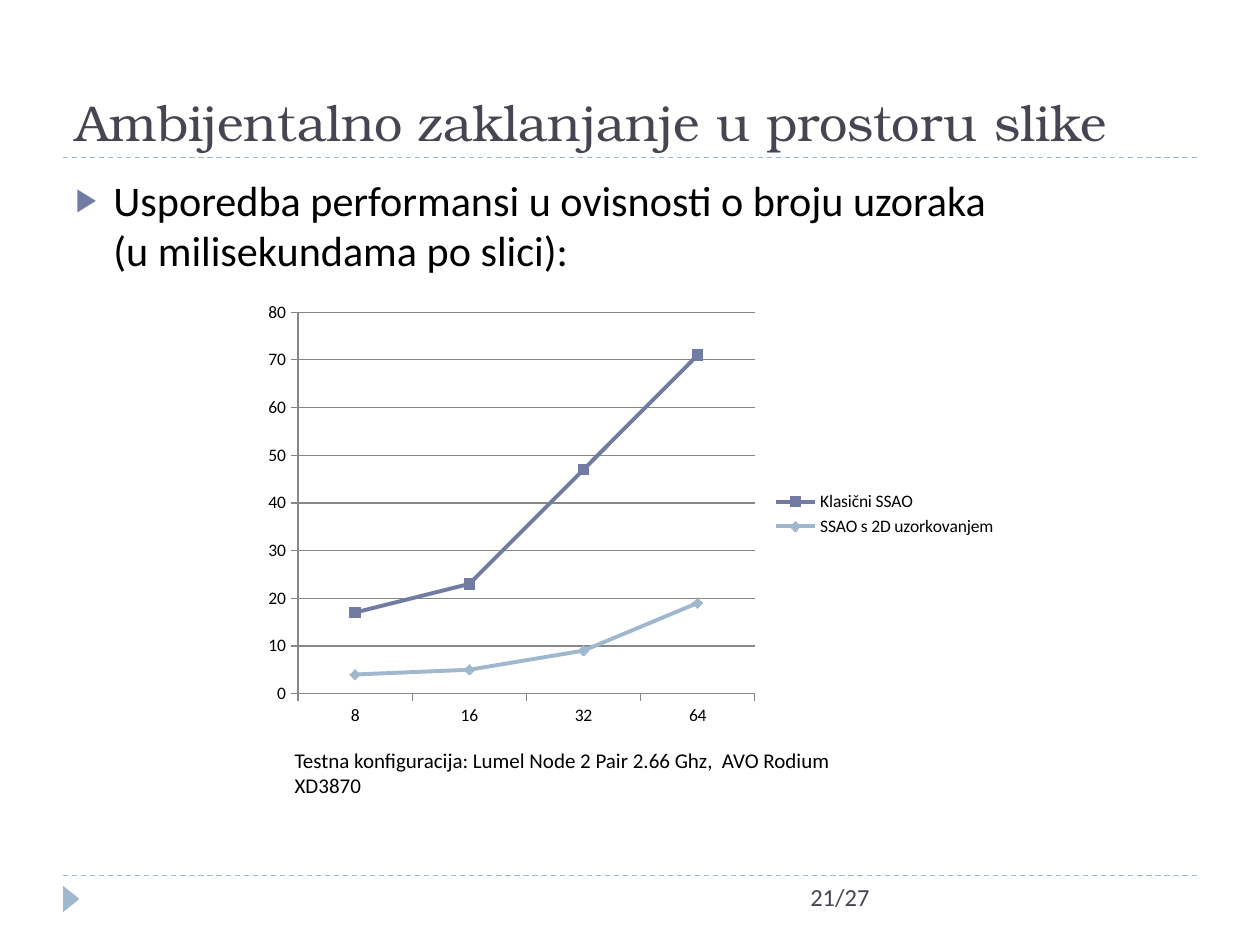
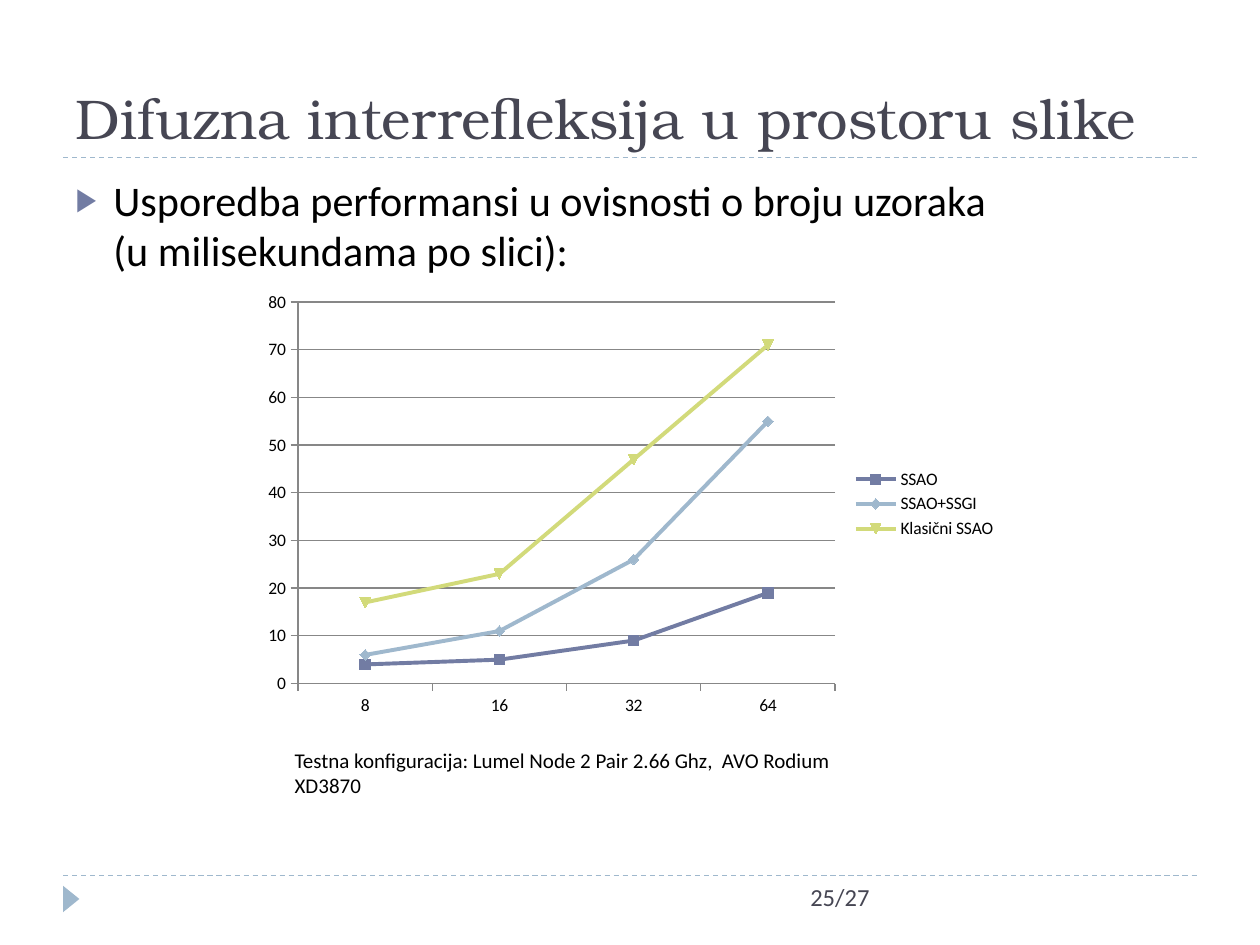
from dataclasses import dataclass

import lxml.etree
import copy
import pptx
import pptx.chart.data
import pptx.dml.color
import pptx.enum.chart
import pptx.enum.dml
import pptx.enum.shapes
import pptx.enum.text
import pptx.oxml.ns
import pptx.util


@dataclass(frozen=True)
class Theme:
    heading_font: str = "TeX Gyre Bonum"
    text_font: str = "Calibri"
    ink: str = "000000"
    slate: str = "464653"
    rule: str = "9FB8CD"
    grid: str = "878787"
    bullet: str = "727CA3"
    series: tuple = ("727CA3", "9FB8CD", "D2DA7A")
    title_size: float = 32
    body_size: float = 24.1
    page_size: float = 14
    caption_size: float = 12
    chart_size: float = 10


THEME = Theme()
COLUMNS, ROWS = 20, 15
SLIDE_TOTAL = 27
INTRO = "Usporedba performansi u ovisnosti o broju uzoraka\v(u milisekundama po slici):"
TEST_SETUP = "Testna konfiguracija: Lumel Node 2 Pair 2.66 Ghz,  AVO Rodium XD3870"
SAMPLE_COUNTS = ("8", "16", "32", "64")
CLASSIC_TIMES = (17, 23, 47, 71)
SAMPLED_TIMES = (4, 5, 9, 19)
COMBINED_TIMES = (6, 11, 26, 55)


def rgb(color):
    return pptx.dml.color.RGBColor.from_string(color)


def write(frame, text, size, color=THEME.ink, font=THEME.text_font,
          align=pptx.enum.text.PP_ALIGN.LEFT,
          anchor=pptx.enum.text.MSO_ANCHOR.TOP, before=0):
    frame.word_wrap = True
    frame.auto_size = pptx.enum.text.MSO_AUTO_SIZE.NONE
    frame.vertical_anchor = anchor
    paragraph = frame.paragraphs[0]
    paragraph.text = text
    paragraph.alignment = align
    paragraph.space_before = pptx.util.Pt(before)
    for run in paragraph.runs:
        run.font.size = pptx.util.Pt(size)
        run.font.name = font
        run.font.color.rgb = rgb(color)
    for line_break in paragraph._p.findall(pptx.oxml.ns.qn("a:br")):
        line_break.append(copy.deepcopy(paragraph.runs[0]._r.rPr))
    return paragraph


class Deck:
    def __init__(self, theme):
        self.theme = theme
        self.presentation = pptx.Presentation()
        self.presentation.slide_width = pptx.util.Inches(10)
        self.presentation.slide_height = pptx.util.Inches(7.5)
        self.slide = None

    def place(self, column, row, columns, rows):
        across = self.presentation.slide_width / COLUMNS
        down = self.presentation.slide_height / ROWS
        return (round(column * across), round(row * down),
                round(columns * across), round(rows * down))

    def move(self, placeholder, *cells):
        (placeholder.left, placeholder.top,
         placeholder.width, placeholder.height) = self.place(*cells)

    def start(self, title, page, title_size):
        layout = self.presentation.slide_layouts.get_by_name("Title and Content")
        self.slide = self.presentation.slides.add_slide(layout)
        for row in (13.9, 2.5):
            self.rule(row)
        self.marker()
        self.title(title, title_size)
        self.label(f"{page}/{SLIDE_TOTAL}", (6.34, 13.9, 7.66, 0.8),
                   size=self.theme.page_size, color=self.theme.slate,
                   align=pptx.enum.text.PP_ALIGN.RIGHT)

    def rule(self, row):
        left, top, width, _ = self.place(1, row, 18, 0)
        divider = self.slide.shapes.add_connector(
            pptx.enum.shapes.MSO_CONNECTOR.STRAIGHT, left, top, left + width, top)
        divider.line.color.rgb = rgb(self.theme.rule)
        divider.line.width = pptx.util.Pt(0.75)
        divider.line.dash_style = pptx.enum.dml.MSO_LINE.DASH
        lxml.etree.SubElement(divider._element.spPr, pptx.oxml.ns.qn("a:effectLst"))

    def marker(self):
        arrow = self.slide.shapes.add_shape(
            pptx.enum.shapes.MSO_SHAPE.ISOSCELES_TRIANGLE,
            *self.place(0.92, 14.14, 0.42, 0.26))
        arrow.rotation = 90
        arrow.shadow.inherit = False
        arrow.fill.solid()
        arrow.fill.fore_color.rgb = rgb(self.theme.rule)
        arrow.line.fill.background()

    def title(self, text, size):
        heading = self.slide.shapes.title
        self.move(heading, 1, 0.34, 18, 2.16)
        write(heading.text_frame, text, size, color=self.theme.slate,
              font=self.theme.heading_font,
              anchor=pptx.enum.text.MSO_ANCHOR.BOTTOM)

    def bullet(self, text):
        body = self.slide.placeholders[1]
        self.move(body, 1, 2.66, 18, 1.52)
        paragraph = write(body.text_frame, text, self.theme.body_size, before=6)
        properties = paragraph._p.get_or_add_pPr()
        indent = pptx.util.Inches(0.3)
        properties.set("marL", str(indent))
        properties.set("indent", str(-indent))
        qn = pptx.oxml.ns.qn
        tint = lxml.etree.SubElement(properties, qn("a:buClr"))
        lxml.etree.SubElement(tint, qn("a:srgbClr"), val=self.theme.bullet)
        lxml.etree.SubElement(properties, qn("a:buSzPct"), val="76000")
        lxml.etree.SubElement(properties, qn("a:buChar"), char="▶")

    def label(self, text, cells, **style):
        box = self.slide.shapes.add_textbox(*self.place(*cells))
        write(box.text_frame, text, **style)

    def line_chart(self, row, timings):
        data = pptx.chart.data.CategoryChartData()
        data.categories = SAMPLE_COUNTS
        for method, times in timings.items():
            data.add_series(method, times)
        chart = self.slide.shapes.add_chart(
            pptx.enum.chart.XL_CHART_TYPE.LINE_MARKERS,
            *self.place(4.02, row, 12, 7), data).chart
        chart.has_title = False
        chart.font.size = pptx.util.Pt(self.theme.chart_size)
        chart.font.name = self.theme.text_font
        chart.font.color.rgb = rgb(self.theme.ink)
        chart.has_legend = True
        chart.legend.position = pptx.enum.chart.XL_LEGEND_POSITION.RIGHT
        chart.legend.include_in_layout = False
        chart.plots[0].vary_by_categories = False
        milliseconds = chart.value_axis
        milliseconds.minimum_scale = 0
        milliseconds.maximum_scale = 80
        milliseconds.major_unit = 10
        milliseconds.has_major_gridlines = True
        for part in (milliseconds, milliseconds.major_gridlines, chart.category_axis):
            part.format.line.color.rgb = rgb(self.theme.grid)
            part.format.line.width = pptx.util.Pt(0.75)
        for method, color in zip(chart.plots[0].series, self.theme.series):
            method.smooth = False
            method.format.line.color.rgb = rgb(color)
            method.format.line.width = pptx.util.Pt(2.25)
            method.marker.size = 6
            method.marker.format.fill.solid()
            method.marker.format.fill.fore_color.rgb = rgb(color)
            method.marker.format.line.color.rgb = rgb(color)

    def comparison(self, title, page, chart_row, timings, title_size=THEME.title_size):
        self.start(title, page, title_size)
        self.bullet(INTRO)
        self.line_chart(chart_row, timings)
        self.label(TEST_SETUP, (4.48, 11.76, 9.92, 0.6), size=self.theme.caption_size)


def main():
    deck = Deck(THEME)
    deck.comparison(
        "Ambijentalno zaklanjanje u prostoru slike", 21, 4.66,
        {"Klasični SSAO": CLASSIC_TIMES, "SSAO s 2D uzorkovanjem": SAMPLED_TIMES},
        title_size=28.8)
    deck.comparison(
        "Difuzna interrefleksija u prostoru slike", 25, 4.5,
        {"SSAO": SAMPLED_TIMES, "SSAO+SSGI": COMBINED_TIMES,
         "Klasični SSAO": CLASSIC_TIMES})
    deck.presentation.save("out.pptx")


if __name__ == "__main__":
    main()
